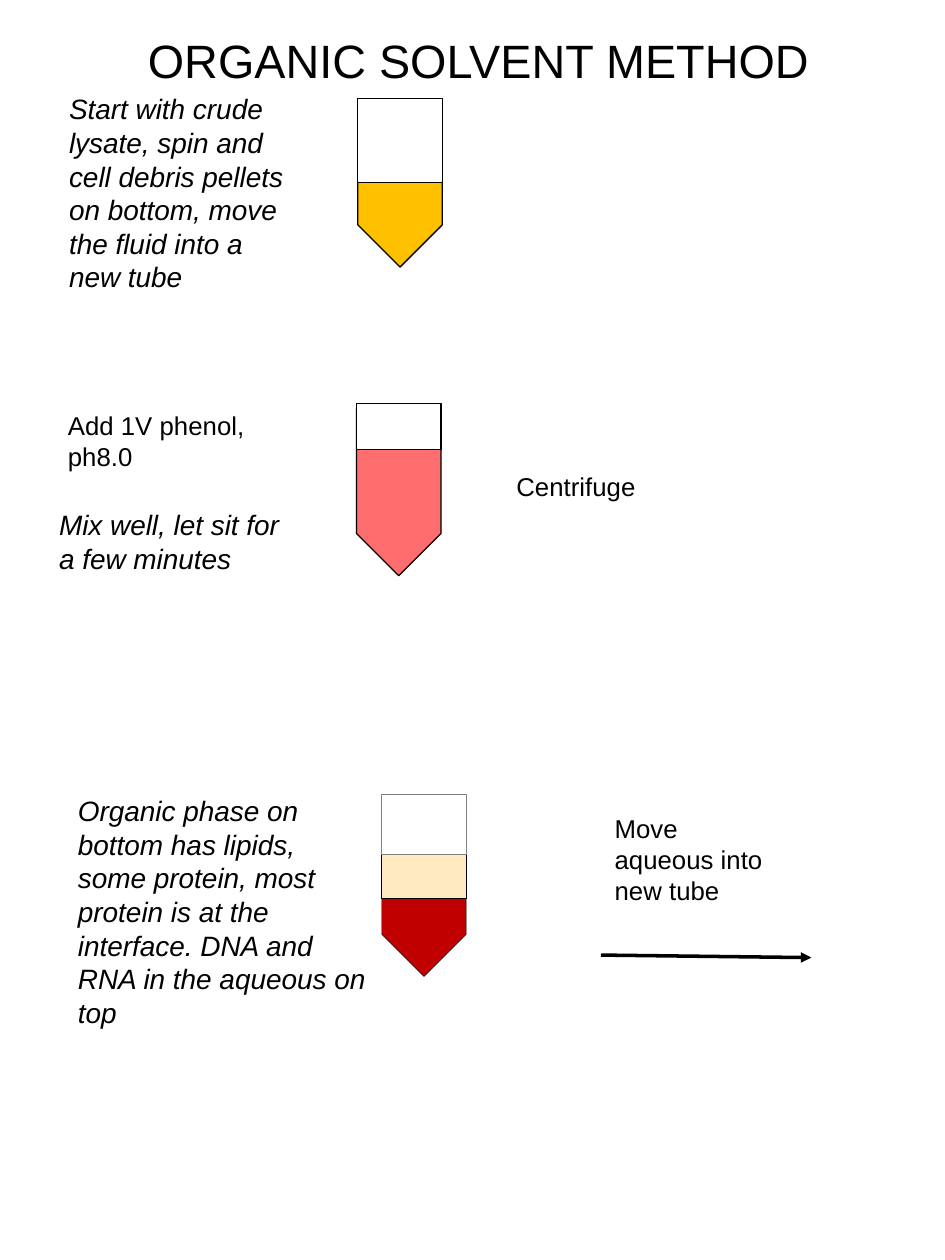
from dataclasses import dataclass

from lxml import etree
from pptx import Presentation
from pptx.dml.color import RGBColor
from pptx.enum.dml import MSO_THEME_COLOR
from pptx.enum.shapes import MSO_CONNECTOR, MSO_SHAPE
from pptx.enum.text import MSO_ANCHOR, MSO_AUTO_SIZE, PP_ALIGN
from pptx.oxml.ns import qn
from pptx.util import Inches, Pt

RECTANGLE = MSO_SHAPE.RECTANGLE
PENTAGON = MSO_SHAPE.PENTAGON
STRAIGHT = MSO_CONNECTOR.STRAIGHT
TOP = MSO_ANCHOR.TOP
NO_AUTOFIT = MSO_AUTO_SIZE.NONE
LEFT, CENTER = PP_ALIGN.LEFT, PP_ALIGN.CENTER

TUBE_WIDTH = 0.67
TUBE_LENGTH = 1.33


@dataclass(frozen=True)
class Theme:
    """Colours, font and type sizes of the slide."""
    font: str = "Arial"
    title_size: float = 26.7
    note_size: float = 16
    step_size: float = 14.7
    black: str = "000000"
    grey: str = "808080"
    white: str = "FFFFFF"
    lysate: str = "FFC000"
    phenol: str = "FF0000"
    organic: str = "C00000"
    aqueous: str = "FFEAC1"


THEME = Theme()


def write_text(shape, paragraphs, size, italic=False, alignment=LEFT):
    """Fill a shape with wrapped paragraphs in the slide font."""
    frame = shape.text_frame
    frame.text = "\n".join(paragraphs)
    frame.word_wrap = True
    frame.auto_size = NO_AUTOFIT
    frame.vertical_anchor = TOP
    for paragraph in frame.paragraphs:
        paragraph.alignment = alignment
        paragraph.font.name = THEME.font
        paragraph.font.size = Pt(size)
        paragraph.font.italic = italic
        paragraph.font.color.rgb = RGBColor.from_string(THEME.black)


def add_label(slide, left, top, width, height, *paragraphs, note=False):
    """Add a text box: an italic note or an upright step."""
    box = slide.shapes.add_textbox(Inches(left), Inches(top), Inches(width), Inches(height))
    write_text(box, paragraphs, THEME.note_size if note else THEME.step_size, italic=note)


def style_shape(shape, fill, line, line_width):
    """Give a shape a plain fill and outline without a shadow."""
    shape.shadow.inherit = False
    shape.fill.solid()
    shape.fill.fore_color.rgb = RGBColor.from_string(fill)
    shape.line.color.rgb = RGBColor.from_string(line)
    shape.line.width = Pt(line_width)


def add_tube(slide, left, top, height, fill, layers, line_width, opacity=100):
    """Draw a pointed tube ending at the box bottom, with layers stacked over it."""
    shapes = slide.shapes.add_group_shape().shapes
    body = shapes.add_shape(
        PENTAGON,
        Inches(left + (TUBE_WIDTH - TUBE_LENGTH) / 2),
        Inches(top + height - (TUBE_LENGTH + TUBE_WIDTH) / 2),
        Inches(TUBE_LENGTH), Inches(TUBE_WIDTH))
    body.rotation = 90
    style_shape(body, fill, THEME.black, line_width)
    if opacity < 100:
        color = body._element.spPr.find(qn("a:solidFill")).find(qn("a:srgbClr"))
        etree.SubElement(color, qn("a:alpha")).set("val", str(opacity * 1000))
    for offset, layer_height, layer_fill, line in layers:
        layer = shapes.add_shape(RECTANGLE, Inches(left), Inches(top + offset),
                                 Inches(TUBE_WIDTH), Inches(layer_height))
        style_shape(layer, layer_fill, line, line_width)


def add_arrow(slide, start_x, start_y, end_x, end_y):
    """Draw a black arrow between two points."""
    arrow = slide.shapes.add_connector(
        STRAIGHT, Inches(start_x), Inches(start_y), Inches(end_x), Inches(end_y))
    arrow.line.color.rgb = RGBColor.from_string(THEME.black)
    arrow.line.width = Pt(2)
    etree.SubElement(arrow.line._get_or_add_ln(), qn("a:tailEnd")).set("type", "triangle")
    etree.SubElement(arrow._element.spPr, qn("a:effectLst"))


def add_title(slide, left, top, width, height):
    """Place and format the title."""
    title = slide.shapes.title
    title.left, title.top = Inches(left), Inches(top)
    title.width, title.height = Inches(width), Inches(height)
    write_text(title, ["ORGANIC SOLVENT METHOD"], THEME.title_size, alignment=CENTER)


def add_lysate_step(slide, left, top):
    """Show the crude lysate after the first spin."""
    add_label(slide, left, top, 1.93, 1.72,
              "Start with crude lysate, spin and cell debris pellets on bottom, "
              "move the fluid into a new tube", note=True)
    add_tube(slide, left + 2.39, top + 0.1, 1.34, THEME.lysate,
             [(0, 0.67, THEME.white, THEME.black)], 0.75)


def add_phenol_step(slide, left, top):
    """Show the lysate mixed with phenol."""
    add_label(slide, left + 0.07, top, 2.11, 0.59, "Add 1V phenol, ph8.0")
    add_label(slide, left, top + 0.78, 2.09, 0.64,
              "Mix well, let sit for a few minutes", note=True)
    add_tube(slide, left + 2.46, top, 1.37, THEME.phenol,
             [(0, 0.37, THEME.white, THEME.black)], 0.75, opacity=57)
    add_label(slide, left + 3.63, top + 0.49, 1.33, 0.35, "Centrifuge")


def add_phases_step(slide, left, top):
    """Show the separated phases and the move to a new tube."""
    add_tube(slide, left + 2.51, top + 0.05, 1.45, THEME.organic,
             [(0.21, 0.62, THEME.aqueous, THEME.black),
              (0, 0.48, THEME.white, THEME.grey)], 0.25)
    add_label(slide, left, top, 2.51, 1.99,
              "Organic phase on bottom has lipids, some protein, most protein is at the "
              "interface. DNA and RNA in the aqueous on top", note=True)
    add_label(slide, left + 4.26, top + 0.15, 1.44, 0.84, "Move aqueous into", "new tube")
    add_arrow(slide, left + 4.25, top + 1.33, left + 5.92, top + 1.35)


def main():
    """Build and save the slide."""
    presentation = Presentation()
    presentation.slide_width, presentation.slide_height = Inches(7.5), Inches(10)
    slide = presentation.slides.add_slide(presentation.slide_layouts.get_by_name("Title Only"))
    slide.background.fill.solid()
    slide.background.fill.fore_color.theme_color = MSO_THEME_COLOR.BACKGROUND_1
    add_title(slide, 0.41, 0.2, 6.78, 0.55)
    add_lysate_step(slide, 0.45, 0.68)
    add_phenol_step(slide, 0.37, 3.2)
    add_phases_step(slide, 0.52, 6.25)
    presentation.save("out.pptx")


if __name__ == "__main__":
    main()
